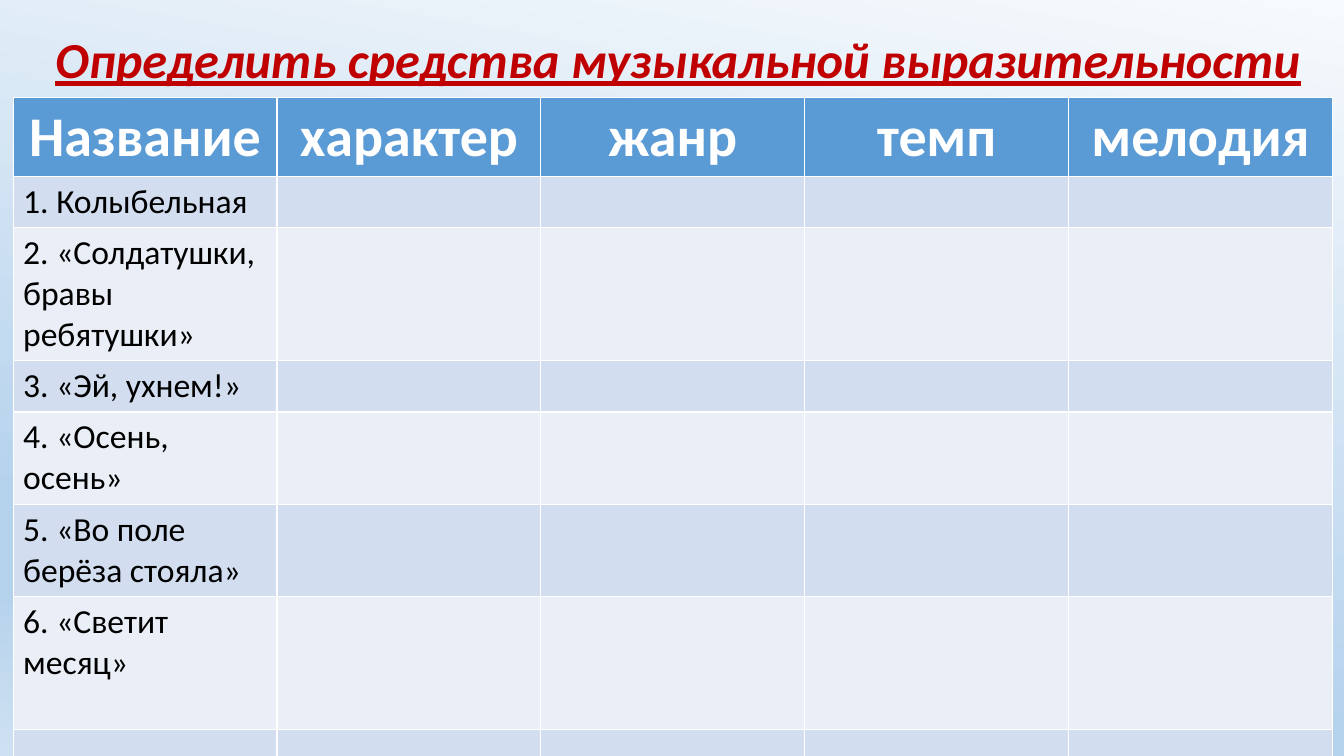
from copy import deepcopy

from pptx import Presentation
from pptx.dml.color import RGBColor
from pptx.enum.text import MSO_ANCHOR, PP_ALIGN
from pptx.util import Inches, Pt

CENTER, LEFT = PP_ALIGN.CENTER, PP_ALIGN.LEFT
MIDDLE = MSO_ANCHOR.MIDDLE
FONT = "Calibri"

HEADERS = ["Название", "характер", "жанр", "темп", "мелодия"]
PIECES = ["1. Колыбельная", "2. «Солдатушки, бравы ребятушки»",
          "3. «Эй, ухнем!»", "4. «Осень, осень»",
          "5. «Во поле берёза стояла»", "6. «Светит месяц»", ""]
ROW_HEIGHTS = [0.78, 0.5, 1.32, 0.51, 0.92, 0.91, 1.32, 0.41]
BANDS = ["D2DEEF", "EAEFF7"]
BACKGROUND = [(0, "F7FAFD"), (0.74, "B5D2EC"), (0.83, "B5D2EC"), (1, "CEE1F2")]


def rgb(value):
    return RGBColor.from_string(value)


def format_text(p, size, color, align, bold):
    p.alignment = align
    for r in p.runs:
        r.font.name = FONT
        r.font.size = Pt(size)
        r.font.bold = bold
        r.font.color.rgb = rgb(color)


prs = Presentation()
prs.slide_width, prs.slide_height = Inches(13.333), Inches(7.5)
s = prs.slides.add_slide(prs.slide_layouts[5])

# Background gradient, running down and slightly to the left
fill = s.background.fill
fill.gradient()
fill.gradient_angle = 260
stop_list = s.background._cSld.find(".//{*}gsLst")
for _ in range(len(BACKGROUND) - len(stop_list)):
    stop_list.append(deepcopy(stop_list[0]))
for stop, (position, color) in zip(fill.gradient_stops, BACKGROUND):
    stop.position = position
    stop.color.rgb = rgb(color)

# Title
title = s.shapes.title
title.left, title.top = Inches(0.13), Inches(0.16)
title.width, title.height = Inches(13.2), Inches(0.91)
tf = title.text_frame
tf.text = "Определить средства музыкальной выразительности"
tf.word_wrap = True
tf.vertical_anchor = MIDDLE
p = tf.paragraphs[0]
p.line_spacing = 0.9
format_text(p, 36, "C00000", CENTER, True)
p.runs[0].font.italic = True
p.runs[0].font.underline = True

# Table: a header row, then one row per piece with blanks to fill in
table = s.shapes.add_table(len(ROW_HEIGHTS), len(HEADERS), Inches(0.13), Inches(0.97),
                           Inches(13.09), Inches(sum(ROW_HEIGHTS))).table
for row, height in zip(table.rows, ROW_HEIGHTS):
    row.height = Inches(height)

for col, header in enumerate(HEADERS):
    cell = table.cell(0, col)
    cell.text = header
    cell.fill.solid()
    cell.fill.fore_color.rgb = rgb("5B9BD5")
    format_text(cell.text_frame.paragraphs[0], 40, "FFFFFF", CENTER, True)

for row, piece in enumerate(PIECES, start=1):
    for col in range(len(HEADERS)):
        cell = table.cell(row, col)
        cell.fill.solid()
        cell.fill.fore_color.rgb = rgb(BANDS[(row - 1) % 2])
    name = table.cell(row, 0)
    name.text = piece
    format_text(name.text_frame.paragraphs[0], 24, "000000", LEFT, False)

prs.save("out.pptx")
